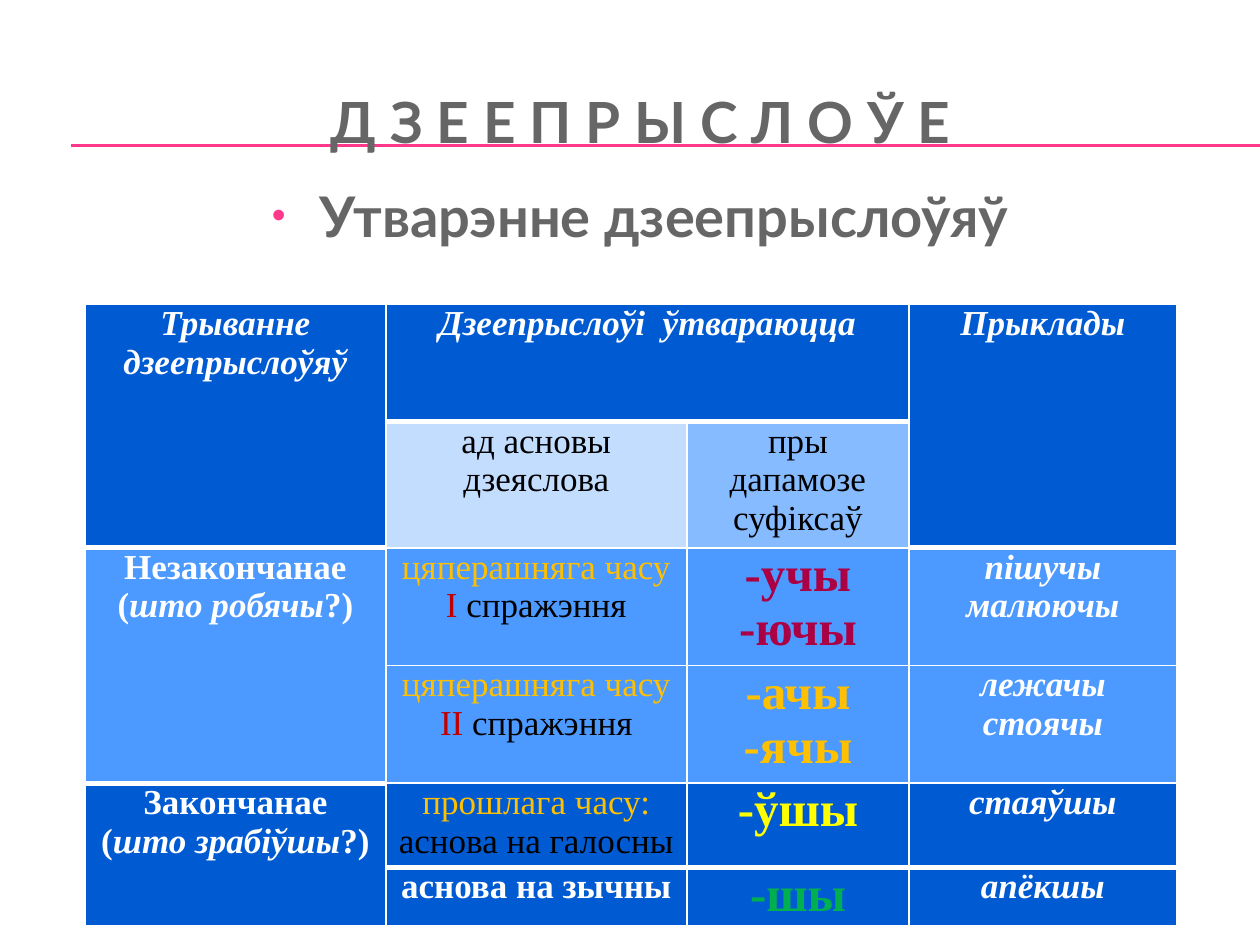
from dataclasses import dataclass
from typing import Optional

from lxml.etree import SubElement
from pptx import Presentation
from pptx.dml.color import RGBColor
from pptx.enum.shapes import MSO_CONNECTOR
from pptx.enum.text import MSO_ANCHOR, PP_ALIGN
from pptx.oxml.ns import qn
from pptx.util import Pt

WHITE = RGBColor(0xFF, 0xFF, 0xFF)
BLACK = RGBColor(0x00, 0x00, 0x00)
GRAY = RGBColor(0x66, 0x66, 0x66)
PINK = RGBColor(0xFF, 0x38, 0x8C)
DARK_BLUE = RGBColor(0x00, 0x5B, 0xD3)
MID_BLUE = RGBColor(0x4C, 0x99, 0xFF)
SOFT_BLUE = RGBColor(0x87, 0xBB, 0xFF)
PALE_BLUE = RGBColor(0xC3, 0xDD, 0xFF)
GOLD = RGBColor(0xFF, 0xC0, 0x00)
RED = RGBColor(0xC0, 0x00, 0x00)
CRIMSON = RGBColor(0xAB, 0x00, 0x43)
YELLOW = RGBColor(0xFF, 0xFF, 0x00)
GREEN = RGBColor(0x00, 0xB0, 0x50)

HEADING_FONT = "Lato"
TABLE_FONT = "Times New Roman"
COLUMN_WIDTHS = (172, 172, 127, 153)
ROW_HEIGHTS = (67, 67, 62, 62, 44, 31)
THICK_TOPS = {(1, 1), (1, 2), (2, 0), (2, 3), (4, 0), (5, 1), (5, 2), (5, 3)}


@dataclass(frozen=True)
class Piece:
    text: str
    color: RGBColor = WHITE
    size: float = 20
    bold: bool = False
    italic: bool = False
    font: str = TABLE_FONT


@dataclass(frozen=True)
class Entry:
    row: int
    column: int
    fill: RGBColor
    lines: list[list[Piece]]
    last_row: Optional[int] = None
    last_column: Optional[int] = None


def heading(text: str) -> list[list[Piece]]:
    return [[Piece(text, bold=True, italic=True)]]


def examples(*words: str) -> list[list[Piece]]:
    return [[Piece(word, bold=True, italic=True)] for word in words]


def plain(*texts: str) -> list[list[Piece]]:
    return [[Piece(text, BLACK)] for text in texts]


def suffixes(color: RGBColor, *endings: str) -> list[list[Piece]]:
    return [[Piece(ending, color, 28, True)] for ending in endings]


def aspect(name: str, question: str) -> list[list[Piece]]:
    return [[Piece(name, bold=True)],
            [Piece("(", bold=True), Piece(question, bold=True, italic=True),
             Piece("?)", bold=True)]]


def conjugation(number: str) -> list[list[Piece]]:
    return [[Piece("цяперашняга часу ", GOLD), Piece(number, RED),
             Piece(" спражэння", BLACK)]]


ENTRIES = [
    Entry(0, 0, DARK_BLUE, heading("Трыванне дзеепрыслоўяў"), last_row=1),
    Entry(0, 1, DARK_BLUE, heading("Дзеепрыслоўі  ўтвараюцца"), last_column=2),
    Entry(0, 3, DARK_BLUE, heading("Прыклады"), last_row=1),
    Entry(1, 1, PALE_BLUE, plain("ад асновы дзеяслова")),
    Entry(1, 2, SOFT_BLUE, plain("пры дапамозе", "суфіксаў")),
    Entry(2, 0, MID_BLUE, aspect("Незакончанае", "што робячы"), last_row=3),
    Entry(2, 1, MID_BLUE, conjugation("І")),
    Entry(2, 2, MID_BLUE, suffixes(CRIMSON, "-учы", "-ючы")),
    Entry(2, 3, MID_BLUE, examples("пішучы", "малюючы")),
    Entry(3, 1, MID_BLUE, conjugation("ІІ")),
    Entry(3, 2, MID_BLUE, suffixes(GOLD, "-ачы", "-ячы")),
    Entry(3, 3, MID_BLUE, examples("лежачы", "стоячы")),
    Entry(4, 0, DARK_BLUE, aspect("Закончанае", "што зрабіўшы"), last_row=5),
    Entry(4, 1, DARK_BLUE, [[Piece("прошлага часу:", GOLD)],
                            [Piece("аснова на галосны", BLACK)]]),
    Entry(4, 2, DARK_BLUE, suffixes(YELLOW, "-ўшы")),
    Entry(4, 3, DARK_BLUE, examples("стаяўшы")),
    Entry(5, 1, DARK_BLUE, [[Piece("аснова на зычны", bold=True)]]),
    Entry(5, 2, DARK_BLUE, suffixes(GREEN, "-шы")),
    Entry(5, 3, DARK_BLUE, examples("апёкшы")),
]


def write(frame, lines: list[list[Piece]]) -> None:
    frame.word_wrap = True
    for index, pieces in enumerate(lines):
        paragraph = frame.paragraphs[0] if index == 0 else frame.add_paragraph()
        paragraph.alignment = PP_ALIGN.CENTER
        for piece in pieces:
            run = paragraph.add_run()
            run.text = piece.text
            run.font.name = piece.font
            run.font.size = Pt(piece.size)
            run.font.bold = piece.bold
            run.font.italic = piece.italic
            run.font.color.rgb = piece.color


def add_rule(slide, y: float) -> None:
    rule = slide.shapes.add_connector(
        MSO_CONNECTOR.STRAIGHT, Pt(40.5), Pt(y), Pt(720), Pt(y))
    rule.line.color.rgb = PINK
    rule.line.width = Pt(0.75)
    SubElement(rule.element.spPr, qn("a:effectLst"))
    rule.element.getparent().insert(2, rule.element)


def add_title(slide) -> None:
    title = slide.shapes.title
    title.left, title.top, title.width, title.height = Pt(24), Pt(36), Pt(684), Pt(66)
    title.text_frame.vertical_anchor = MSO_ANCHOR.MIDDLE
    write(title.text_frame, [[
        Piece("Д З Е Е П Р Ы С Л О Ў Е", GRAY, 32.4, True, font=HEADING_FONT)]])


def add_subtitle(slide) -> None:
    subtitle = slide.shapes.add_textbox(Pt(24), Pt(100), Pt(684), Pt(379))
    write(subtitle.text_frame, [[
        Piece("Утварэнне дзеепрыслоўяў", GRAY, 32, True, font=HEADING_FONT)]])
    properties = subtitle.text_frame.paragraphs[0]._p.get_or_add_pPr()
    properties.set("marL", str(Pt(27)))
    properties.set("indent", str(Pt(-27)))
    bullet_color = SubElement(properties, qn("a:buClr"))
    SubElement(bullet_color, qn("a:srgbClr"), val=str(PINK))
    SubElement(properties, qn("a:buSzPct"), val="70000")
    SubElement(properties, qn("a:buFont"), typeface="Arial")
    SubElement(properties, qn("a:buChar"), char="•")


def add_borders(cell, row: int, column: int) -> None:
    top = 3 if (row, column) in THICK_TOPS else 1
    bottom = 3 if (row + cell.span_height, column) in THICK_TOPS else 1
    properties = cell._tc.get_or_add_tcPr()
    for edge, width in (("lnL", 1), ("lnR", 1), ("lnT", top), ("lnB", bottom)):
        border = SubElement(properties, qn(f"a:{edge}"), w=str(Pt(width)))
        fill = SubElement(border, qn("a:solidFill"))
        SubElement(fill, qn("a:srgbClr"), val=str(WHITE))


def add_formation_table(slide) -> None:
    table = slide.shapes.add_table(
        len(ROW_HEIGHTS), len(COLUMN_WIDTHS), Pt(48.5), Pt(174),
        Pt(sum(COLUMN_WIDTHS)), Pt(sum(ROW_HEIGHTS))).table
    for column, width in zip(table.columns, COLUMN_WIDTHS):
        column.width = Pt(width)
    for row, height in zip(table.rows, ROW_HEIGHTS):
        row.height = Pt(height)
    for entry in ENTRIES:
        last_row = entry.last_row or entry.row
        last_column = entry.last_column or entry.column
        origin = table.cell(entry.row, entry.column)
        if (last_row, last_column) != (entry.row, entry.column):
            origin.merge(table.cell(last_row, last_column))
        for row in range(entry.row, last_row + 1):
            for column in range(entry.column, last_column + 1):
                cell = table.cell(row, column)
                cell.margin_left = cell.margin_right = Pt(5)
                cell.margin_top = cell.margin_bottom = Pt(0)
                add_borders(cell, row, column)
                cell.fill.solid()
                cell.fill.fore_color.rgb = entry.fill
        write(origin.text_frame, entry.lines)


def main() -> None:
    deck = Presentation()
    deck.slide_width, deck.slide_height = Pt(720), Pt(540)
    slide = deck.slides.add_slide(deck.slide_layouts[5])
    add_title(slide)
    for y in (82.8, 83.5):
        add_rule(slide, y)
    add_subtitle(slide)
    add_formation_table(slide)
    deck.save("out.pptx")


if __name__ == "__main__":
    main()
